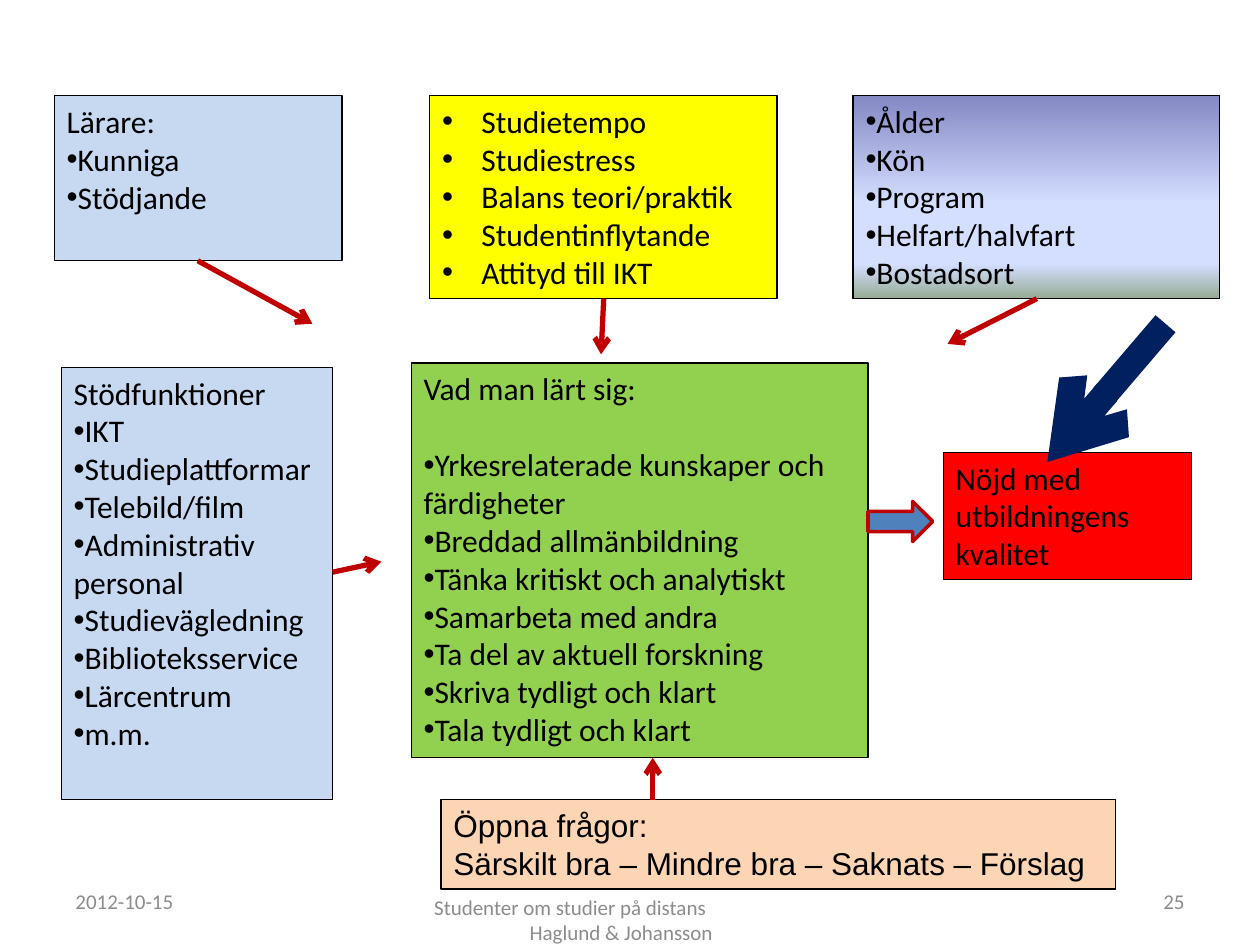
from lxml import etree
from pptx import Presentation
from pptx.dml.color import RGBColor
from pptx.enum.shapes import MSO_CONNECTOR as CONN, MSO_SHAPE as SHAPE
from pptx.enum.text import MSO_ANCHOR as ANCHOR, PP_ALIGN as ALIGN
from pptx.oxml.ns import qn
from pptx.util import Pt

BLACK, DARK_RED, NAVY, GREY = "000000", "C00000", "002060", "8C8C8C"
LIGHT_BLUE = "C6D9F1"
AGE_GRADIENT = [(0, "8488C4"), (53, "D4DEFF"), (83, "D4DEFF"), (100, "96AB94")]
LINE_HEIGHT = 22


def rgb(color):
    return RGBColor.from_string(color)


def set_line(sp, color, width):
    sp.line.color.rgb = rgb(color)
    sp.line.width = Pt(width)


def set_fill(sp, fill):
    """Fill with one colour, or downwards through (percent, colour) stops."""
    if isinstance(fill, str):
        sp.fill.solid()
        sp.fill.fore_color.rgb = rgb(fill)
        return
    sp.fill.gradient()
    sp.fill.gradient_angle = 270
    stops = sp._element.spPr.find(".//" + qn("a:gsLst"))
    for stop in list(stops):
        stops.remove(stop)
    for percent, color in fill:
        stop = etree.SubElement(stops, qn("a:gs"), pos=str(percent * 1000))
        etree.SubElement(stop, qn("a:srgbClr"), val=color)


def add_text(tf, text, first=False, size=18, font="Calibri", color=BLACK,
             align=ALIGN.LEFT, bullet=False, hang=0, after=0):
    p = tf.paragraphs[0] if first else tf.add_paragraph()
    p.alignment = align
    p.space_after = Pt(after)
    if bullet:
        pPr = p._p.get_or_add_pPr()
        pPr.set("marL", str(Pt(hang)))
        pPr.set("indent", str(-Pt(hang)))
        etree.SubElement(pPr, qn("a:buFont"), typeface="Arial")
        etree.SubElement(pPr, qn("a:buChar"), char="•")
    r = p.add_run()
    r.text = text
    r.font.size = Pt(size)
    r.font.name = font
    r.font.color.rgb = rgb(color)


def add_block(s, kind, box, fill, line=BLACK, width=0.75):
    sp = s.shapes.add_shape(kind, *map(Pt, box))
    sp.shadow.inherit = False
    set_fill(sp, fill)
    set_line(sp, line, width)
    return sp


def add_topic_box(s, box, fill, heading=(), items=(), font="Calibri",
                  hang=0, gap=0):
    """A framed box: plain heading lines, then a bulleted list."""
    tf = add_block(s, SHAPE.RECTANGLE, box, fill).text_frame
    tf.word_wrap = True
    tf.vertical_anchor = ANCHOR.TOP
    for i, text in enumerate(heading):
        add_text(tf, text, first=i == 0, font=font, after=gap)
    for i, text in enumerate(items):
        add_text(tf, text, first=i == 0 and not heading, font=font,
                 bullet=True, hang=hang)


def add_arrow(s, start, end, color=DARK_RED, width=3):
    cxn = s.shapes.add_connector(CONN.STRAIGHT, *map(Pt, start + end))
    set_line(cxn, color, width)
    etree.SubElement(cxn.line._get_or_add_ln(), qn("a:tailEnd"), type="arrow")
    etree.SubElement(cxn._element.spPr, qn("a:effectLst"))


def add_footer(s, box, *lines):
    """A small grey text box; each line is (text, alignment)."""
    tf = s.shapes.add_textbox(*map(Pt, box)).text_frame
    tf.word_wrap = True
    tf.vertical_anchor = ANCHOR.MIDDLE
    for i, (text, align) in enumerate(lines):
        add_text(tf, text, first=i == 0, size=12, color=GREY, align=align)


def add_factors(s):
    # Outcome
    add_topic_box(s, (539, 258.5, 142, 72.5), "FF0000",
                  ["Nöjd med utbildningens kvalitet"])
    # Teachers
    add_topic_box(s, (31, 54.7, 164.5, 94.3), LIGHT_BLUE,
                  ["Lärare:"], ["Kunniga", "Stödjande"])
    # Learning
    add_topic_box(s, (235, 207.4, 261, 225.4), "92D050", ["Vad man lärt sig:"],
                  ["Yrkesrelaterade kunskaper och färdigheter",
                   "Breddad allmänbildning", "Tänka kritiskt och analytiskt",
                   "Samarbeta med andra", "Ta del av aktuell forskning",
                   "Skriva tydligt och klart", "Tala tydligt och klart"],
                  gap=LINE_HEIGHT)
    # Studies
    add_topic_box(s, (245.5, 54.7, 198.5, 116), "FFFF00",
                  items=["Studietempo", "Studiestress", "Balans teori/praktik",
                         "Studentinflytande", "Attityd till IKT"], hang=22.5)
    # Support functions
    add_topic_box(s, (35, 210, 155, 247), LIGHT_BLUE, ["Stödfunktioner"],
                  ["IKT", "Studieplattformar", "Telebild/film",
                   "Administrativ personal", "Studievägledning",
                   "Biblioteksservice", "Lärcentrum", "m.m."])
    # Open questions
    add_topic_box(s, (252, 457, 385.5, 51), "FCD5B5",
                  ["Öppna frågor:",
                   "Särskilt bra – Mindre bra – Saknats – Förslag"],
                  font="Arial")
    # Background
    add_topic_box(s, (487.5, 54.7, 209.5, 116), AGE_GRADIENT,
                  items=["Ålder", "Kön", "Program", "Helfart/halvfart",
                         "Bostadsort"])


def add_arrows(s):
    # From each factor towards learning
    for start, end in [((113, 149), (178.5, 185)),
                       ((190, 327), (218, 321)),
                       ((345, 170.7), (343.5, 202.5)),
                       ((592.5, 170.7), (541.5, 196.5)),
                       ((373, 457), (373, 433))]:
        add_arrow(s, start, end)
    # From learning to outcome
    add_block(s, SHAPE.RIGHT_ARROW, (496, 286.5, 37, 23), "4F81BD", DARK_RED, 2)
    # From background to outcome
    add_arrow(s, (666, 185), (598.5, 264), NAVY, 15)


def add_footers(s):
    add_footer(s, (36, 500.5, 168, 28.8), ("2012-10-15", ALIGN.LEFT))
    add_footer(s, (241, 511, 228, 28.8),
               ("Studenter om studier på distans", ALIGN.LEFT),
               ("Haglund & Johansson", ALIGN.CENTER))
    add_footer(s, (516, 500.5, 168, 28.8), ("25", ALIGN.RIGHT))


def main():
    prs = Presentation()
    prs.slide_width, prs.slide_height = Pt(720), Pt(540)
    s = prs.slides.add_slide(prs.slide_layouts[6])
    add_factors(s)
    add_footers(s)
    add_arrows(s)
    prs.save("out.pptx")


if __name__ == "__main__":
    main()
